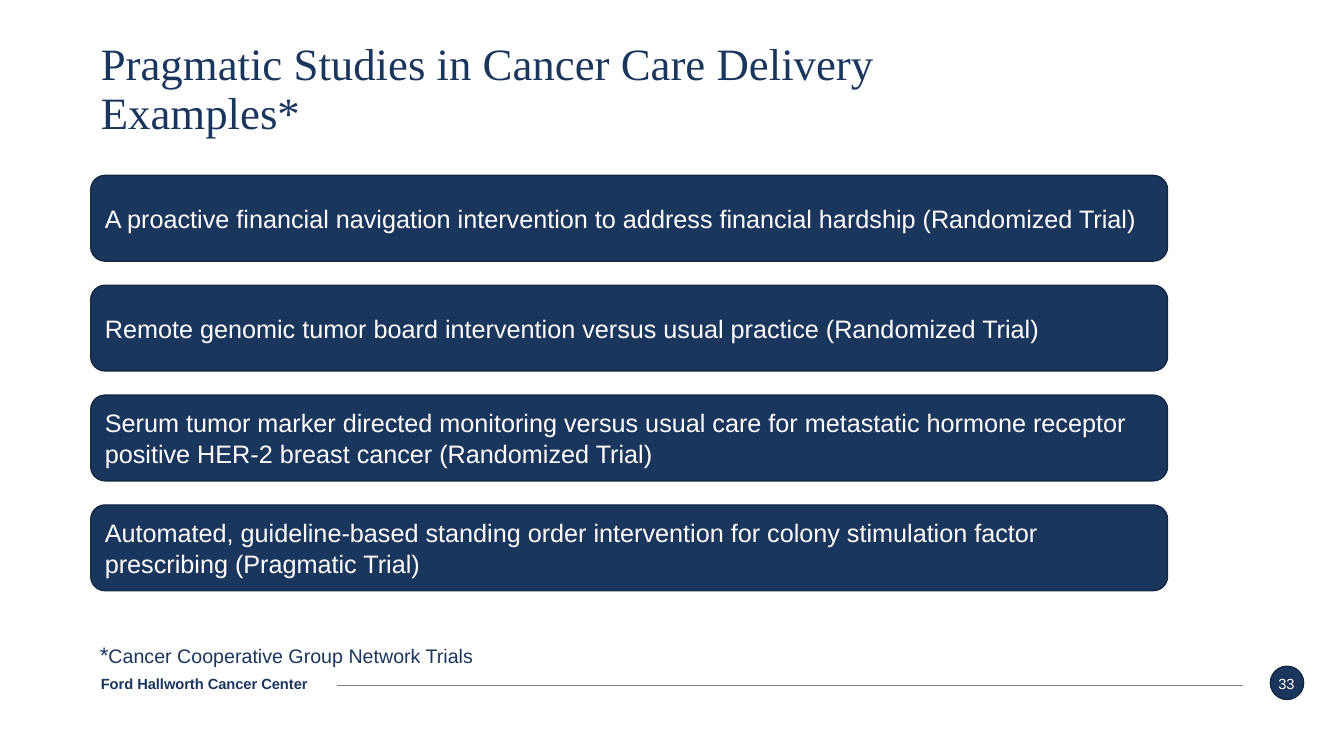
import pptx
import pptx.util
import pptx.dml.color
import pptx.enum.shapes
import pptx.enum.text
import lxml.etree

Inches = pptx.util.Inches
Pt = pptx.util.Pt
SHAPE = pptx.enum.shapes.MSO_SHAPE
ALIGN = pptx.enum.text.PP_ALIGN
MIDDLE = pptx.enum.text.MSO_ANCHOR.MIDDLE
NAVY, DARK_NAVY, WHITE, GRAY = "1B365D", "142845", "FFFFFF", "7F7F7F"


def paint(color_format, value):
    color_format.rgb = pptx.dml.color.RGBColor.from_string(value)


def add_run(para, text, size, color, font="Arial", bold=False):
    span = para.add_run()
    span.text = text
    span.font.size = Pt(size)
    span.font.name = font
    span.font.bold = bold
    paint(span.font.color, color)


deck = pptx.Presentation()
deck.slide_width = Inches(13.33)
deck.slide_height = Inches(7.5)
page = deck.slides.add_slide(deck.slide_layouts[6])

trials = [
    "A proactive financial navigation intervention to address financial hardship (Randomized Trial)",
    "Remote genomic tumor board intervention versus usual practice (Randomized Trial)",
    "Serum tumor marker directed monitoring versus usual care for metastatic hormone receptor "
    "positive HER-2 breast cancer (Randomized Trial)",
    "Automated, guideline-based standing order intervention for colony stimulation factor "
    "prescribing (Pragmatic Trial)",
]
panels = [(SHAPE.OVAL, 12.6, 6.61, 0.33, 0.33, "")]
for index, trial in enumerate(trials):
    panels.append((SHAPE.ROUNDED_RECTANGLE, 0.9, 1.74 + 1.09 * index, 10.68, 0.85, trial))

for kind, left, top, width, height, text in panels:
    panel = page.shapes.add_shape(kind, Inches(left), Inches(top), Inches(width), Inches(height))
    panel.shadow.inherit = False
    panel.fill.solid()
    paint(panel.fill.fore_color, NAVY)
    paint(panel.line.color, DARK_NAVY)
    panel.line.width = Pt(1)
    if text:
        panel.text_frame.word_wrap = True
        panel.text_frame.vertical_anchor = MIDDLE
        para = panel.text_frame.paragraphs[0]
        para.alignment = ALIGN.LEFT
        add_run(para, text, 18, WHITE)

rule = page.shapes.add_connector(
    pptx.enum.shapes.MSO_CONNECTOR.STRAIGHT, Inches(3.34), Inches(6.8), Inches(12.33), Inches(6.8)
)
paint(rule.line.color, GRAY)
rule.line.width = Pt(0.75)
lxml.etree.SubElement(rule._element.spPr, pptx.oxml.ns.qn("a:effectLst"))

frames = {}
for name, left, top, width, height in [
    ("title", 1, 0.4, 11.33, 1),
    ("footer", 1, 6.58, 2.3, 0.4),
    ("number", 12.51, 6.58, 0.5, 0.4),
    ("footnote", 0.99, 6.33, 3.87, 0.3),
]:
    box = page.shapes.add_textbox(Inches(left), Inches(top), Inches(width), Inches(height))
    frame = box.text_frame
    frame.word_wrap = True
    frame.margin_left = frame.margin_right = frame.margin_top = frame.margin_bottom = 0
    frame.vertical_anchor = MIDDLE
    frames[name] = frame

title = frames["title"].paragraphs[0]
title.line_spacing = 0.9
add_run(title, "Pragmatic Studies in Cancer Care Delivery", 32, NAVY, "Times New Roman")
title.add_line_break()
add_run(title, "Examples*", 32, NAVY, "Times New Roman")

add_run(frames["footer"].paragraphs[0], "Ford Hallworth Cancer Center", 10.5, NAVY, bold=True)

number = frames["number"].paragraphs[0]
number.alignment = ALIGN.CENTER
add_run(number, "33", 10.5, WHITE)

frames["footnote"].vertical_anchor = pptx.enum.text.MSO_ANCHOR.TOP
footnote = frames["footnote"].paragraphs[0]
footnote.line_spacing = 1.1
add_run(footnote, "*", 16, NAVY)
add_run(footnote, "Cancer Cooperative Group Network Trials", 14, NAVY)

deck.save("out.pptx")
